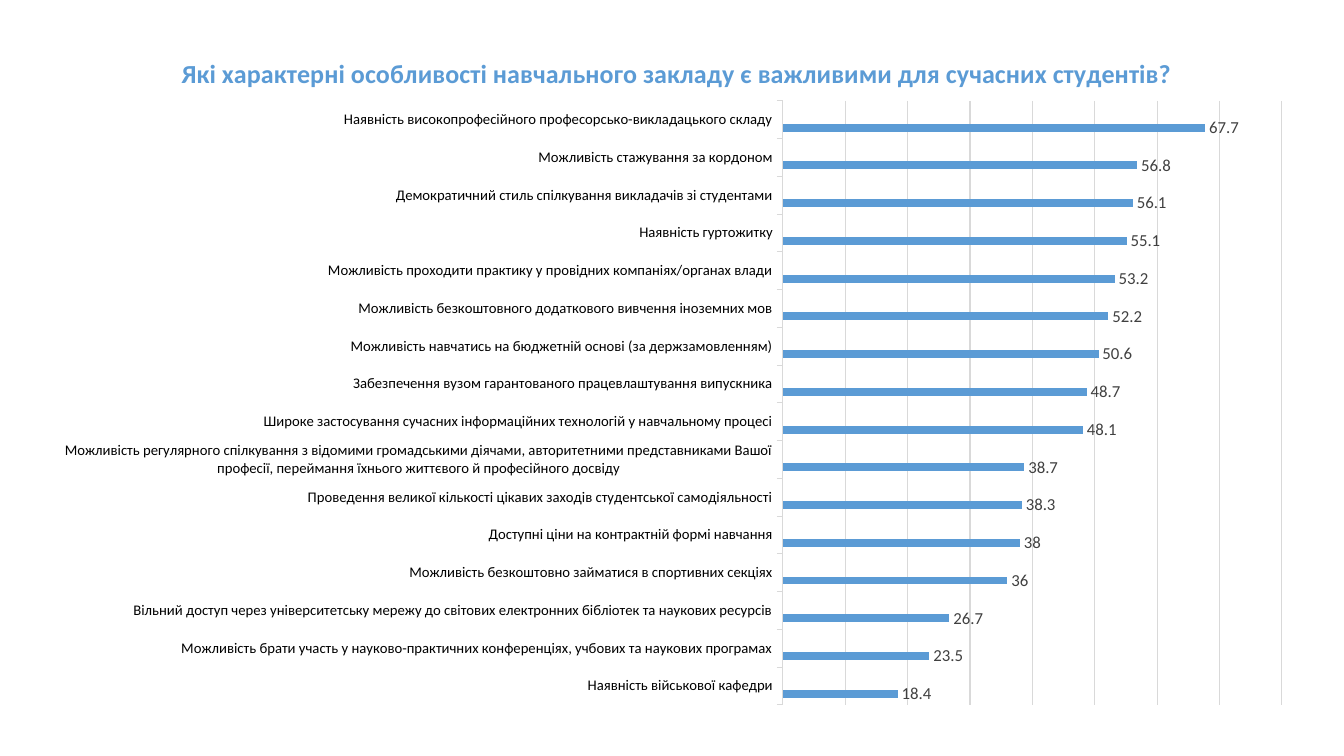
from dataclasses import dataclass

from lxml.etree import SubElement
from pptx import Presentation
from pptx.chart.data import CategoryChartData as ChartData
from pptx.dml.color import RGBColor as Color
from pptx.enum.chart import XL_CHART_TYPE as ChartType
from pptx.enum.chart import XL_LABEL_POSITION as LabelPosition
from pptx.enum.chart import XL_TICK_LABEL_POSITION as TickLabel
from pptx.enum.chart import XL_TICK_MARK as TickMark
from pptx.oxml import parse_xml
from pptx.oxml.ns import nsdecls, qn
from pptx.util import Emu, Pt


@dataclass(frozen=True)
class Theme:
    font: str = "Calibri"
    accent: str = "5B9BD5"
    spare: tuple = ("ED7D31", "A5A5A5")
    grid: str = "D9D9D9"
    label: str = "404040"
    text: str = "000000"
    base_size: float = 10
    category_size: float = 10.5
    label_size: float = 12
    title_size: float = 18.6


THEME = Theme()
EMU_PER_PX = 914400 / 100.8

# Boxes in px: left, top, width, height
CHART_BOX = (40, 25, 1267, 695)
PLOT_BOX = (783, 101, 499, 604)
TITLE_CORNER = (177, 50)

TITLE = "Які характерні особливості навчального закладу є важливими для сучасних студентів?"

# Share of answers, from the bottom bar to the top one
ANSWERS = [
    ("Наявність військової кафедри", 18.4),
    ("Можливість брати участь у науково-практичних конференціях, учбових та наукових програмах", 23.5),
    ("Вільний доступ через університетську мережу до світових електронних бібліотек та наукових ресурсів", 26.7),
    ("Можливість безкоштовно займатися в спортивних секціях", 36),
    ("Доступні ціни на контрактній формі навчання", 38),
    ("Проведення великої кількості цікавих заходів студентської самодіяльності", 38.3),
    ("Можливість регулярного спілкування з відомими громадськими діячами, авторитетними "
     "представниками Вашої професії, переймання їхнього життєвого й професійного досвіду", 38.7),
    ("Широке застосування сучасних інформаційних технологій у навчальному процесі", 48.1),
    ("Забезпечення вузом гарантованого працевлаштування випускника", 48.7),
    ("Можливість навчатись на бюджетній основі (за держзамовленням)", 50.6),
    ("Можливість безкоштовного додаткового вивчення іноземних мов", 52.2),
    ("Можливість проходити практику у провідних компаніях/органах влади", 53.2),
    ("Наявність гуртожитку", 55.1),
    ("Демократичний стиль спілкування викладачів зі студентами", 56.1),
    ("Можливість стажування за кордоном", 56.8),
    ("Наявність високопрофесійного професорсько-викладацького складу", 67.7),
]


def px(length):
    return Emu(round(length * EMU_PER_PX))


def style_font(font, size, color, bold=False):
    font.name = THEME.font
    font.size = Pt(size)
    font.bold = bold
    font.color.rgb = Color.from_string(color)


def style_line(line):
    line.color.rgb = Color.from_string(THEME.grid)
    line.width = Pt(0.75)


def place_in_chart(parent, index, corner, size=None):
    """Fix a chart part at a px corner, as fractions of the chart box."""
    old = parent.find(qn("c:layout"))
    if old is not None:
        parent.remove(old)
    layout = parse_xml(f"<c:layout {nsdecls('c')}><c:manualLayout/></c:layout>")
    manual = layout[0]
    left, top, width, height = CHART_BOX
    settings = {"xMode": "edge", "yMode": "edge",
                "x": (corner[0] - left) / width, "y": (corner[1] - top) / height}
    if size:
        settings = {"layoutTarget": "inner", **settings,
                    "w": size[0] / width, "h": size[1] / height}
    for name, value in settings.items():
        SubElement(manual, qn(f"c:{name}")).set("val", str(value))
    parent.insert(index, layout)


def add_answer_chart(page):
    data = ChartData()
    data.categories = [name for name, _ in ANSWERS]
    data.add_series("Series 1", [value for _, value in ANSWERS])
    # Empty series keep each bar in the lower third of its slot
    for number in (2, 3):
        data.add_series(f"Series {number}", [None] * len(ANSWERS))
    frame = page.shapes.add_chart(ChartType.BAR_CLUSTERED, *map(px, CHART_BOX), data)
    chart = frame.chart
    chart.has_legend = False
    style_font(chart.font, THEME.base_size, THEME.text)
    return chart


def format_title(chart):
    chart.has_title = True
    para = chart.chart_title.text_frame.paragraphs[0]
    span = para.add_run()
    span.text = TITLE
    style_font(span.font, THEME.title_size, THEME.accent, bold=True)
    chart.chart_title.include_in_layout = False
    place_in_chart(chart.chart_title._element, 1, TITLE_CORNER)


def format_axes(chart):
    names = chart.category_axis
    names.major_tick_mark = TickMark.OUTSIDE
    names.minor_tick_mark = TickMark.NONE
    names.tick_label_position = TickLabel.NEXT_TO_AXIS
    style_font(names.tick_labels.font, THEME.category_size, THEME.text)
    style_line(names.format.line)

    values = chart.value_axis
    values.minimum_scale, values.maximum_scale, values.major_unit = 0, 80, 10
    values.has_major_gridlines = True
    style_line(values.major_gridlines.format.line)
    values.visible = False


def format_bars(chart):
    plot = chart.plots[0]
    plot.gap_width = 182
    plot.overlap = 0
    plot.vary_by_categories = False
    for series, color in zip(plot.series, (THEME.accent, *THEME.spare)):
        series.format.fill.solid()
        series.format.fill.fore_color.rgb = Color.from_string(color)
        labels = series.data_labels
        labels.show_value = True
        labels.position = LabelPosition.OUTSIDE_END
        style_font(labels.font, THEME.label_size, THEME.label)
    plot_area = chart._chartSpace.chart.plotArea
    place_in_chart(plot_area, 0, PLOT_BOX[:2], PLOT_BOX[2:])


def main():
    deck = Presentation()
    deck.slide_width, deck.slide_height = px(1344), px(756)
    page = deck.slides.add_slide(deck.slide_layouts[6])

    # Survey chart with its own heading
    chart = add_answer_chart(page)
    format_title(chart)
    format_axes(chart)
    format_bars(chart)

    deck.save("out.pptx")


if __name__ == "__main__":
    main()
